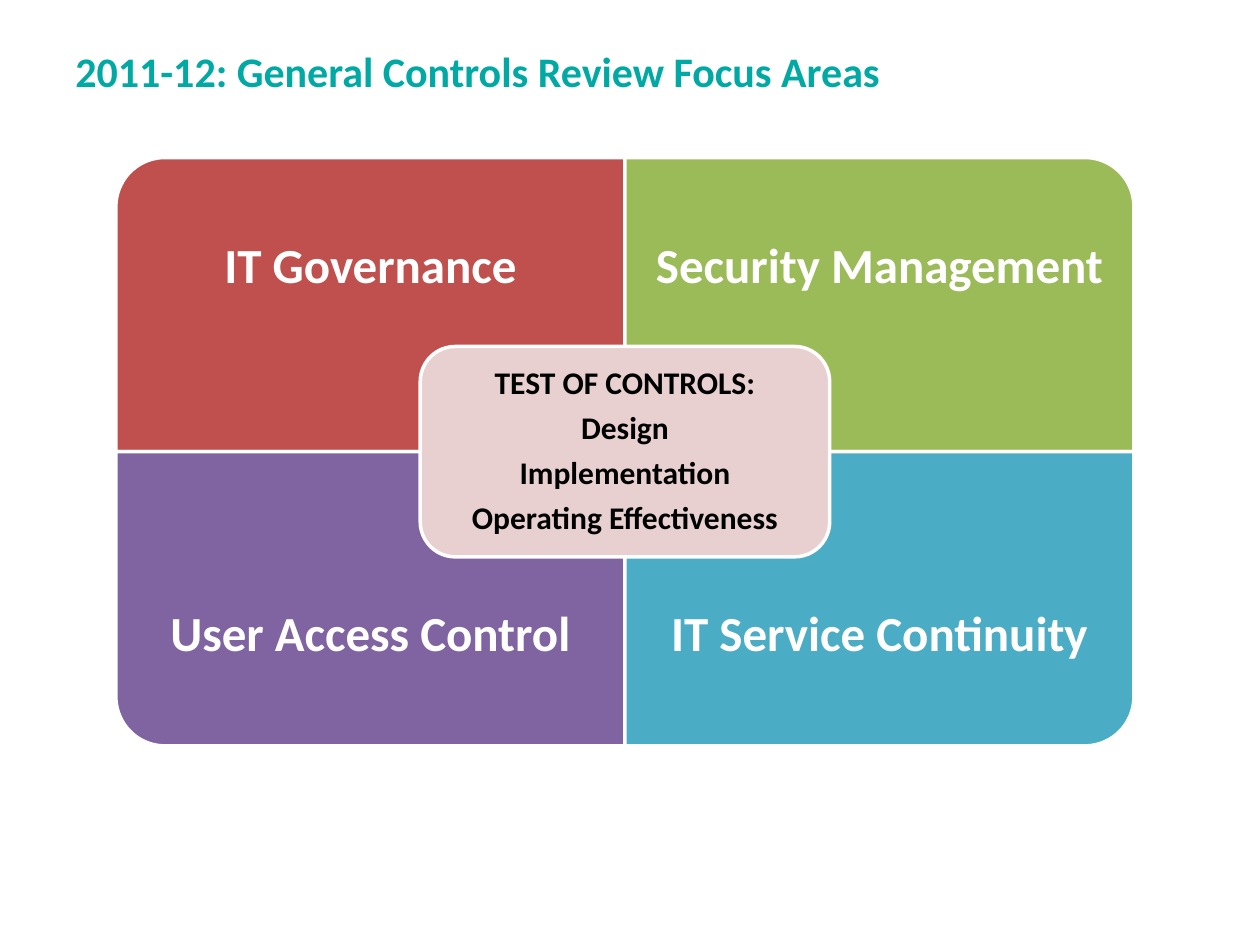
from math import cos, pi, sin

from pptx import Presentation
from pptx.dml.color import RGBColor as RGB
from pptx.enum.shapes import MSO_SHAPE as Shape
from pptx.enum.text import MSO_ANCHOR as Anchor, PP_ALIGN as Align
from pptx.util import Inches, Pt

THEME = {
    "font": "Calibri",
    "title": (24, "00A9A4"),
    "area": (28, "FFFFFF"),
    "core": (18, "000000"),
    "pale": "E8D0D0",
    "edge": "FFFFFF",
}


def write(shape, lines, style, pads, align=Align.CENTER):
    """Fill a shape with bold lines; pads are left, top, right, bottom."""
    size, color = THEME[style]
    frame = shape.text_frame
    frame.word_wrap = True
    frame.vertical_anchor = Anchor.MIDDLE
    frame.margin_left, frame.margin_top, frame.margin_right, frame.margin_bottom = map(Inches, pads)
    for i, line in enumerate(lines):
        para = frame.paragraphs[0] if i == 0 else frame.add_paragraph()
        para.alignment = align
        if style != "title":
            para.line_spacing = 0.9
        if i < len(lines) - 1:
            para.space_after = Pt(size * 0.35)
        run = para.add_run()
        run.text = line
        run.font.name = THEME["font"]
        run.font.size = Pt(size)
        run.font.bold = True
        run.font.color.rgb = RGB.from_string(color)


def paint(shape, color):
    shape.shadow.inherit = False
    shape.fill.solid()
    shape.fill.fore_color.rgb = RGB.from_string(color)
    shape.line.color.rgb = RGB.from_string(THEME["edge"])
    shape.line.width = Pt(2)


deck = Presentation()
deck.slide_width, deck.slide_height = Inches(10), Inches(7.5)
slide = deck.slides.add_slide(deck.slide_layouts[6])
shapes = slide.shapes

title = shapes.add_textbox(Inches(0.5), Inches(0.3), Inches(8.83), Inches(0.53))
write(title, ["2011-12: General Controls Review Focus Areas"], "title",
      (0.1, 0.05, 0.1, 0.05), Align.LEFT)

# Four areas meet at the middle; each has its outer corner rounded.
mid_x, mid_y = 4.96, 3.585
wide, high, radius = 4.04, 2.335, 0.39
steps = 24
areas = [
    ("IT Governance", "C0504D", -1, -1),
    ("Security Management", "9BBB59", 1, -1),
    ("User Access Control", "8064A2", -1, 1),
    ("IT Service Continuity", "4BACC6", 1, 1),
]
for name, color, dx, dy in areas:
    points = [(wide, 0)]
    for i in range(steps + 1):
        turn = pi / 2 * i / steps
        points.append((wide - radius + radius * cos(turn),
                       high - radius + radius * sin(turn)))
    points.append((0, high))
    form = shapes.build_freeform(Inches(mid_x), Inches(mid_y))
    form.add_line_segments([(Inches(mid_x + dx * x), Inches(mid_y + dy * y))
                            for x, y in points], close=True)
    area = form.convert_to_shape()
    paint(area, color)
    pads = (0.22, 0.22, 0.22, 0.8) if dy < 0 else (0.22, 0.8, 0.22, 0.22)
    write(area, [name], "area", pads)

core_w, core_h = 3.25, 1.67
core = shapes.add_shape(Shape.ROUNDED_RECTANGLE,
                        Inches(mid_x - core_w / 2), Inches(mid_y - core_h / 2),
                        Inches(core_w), Inches(core_h))
paint(core, THEME["pale"])
# The preset already insets its text by about 0.08 at each rounded corner.
write(core, ["TEST OF CONTROLS:", "Design", "Implementation", "Operating Effectiveness"],
      "core", (0.08, 0.08, 0.08, 0.08))

deck.save("out.pptx")
